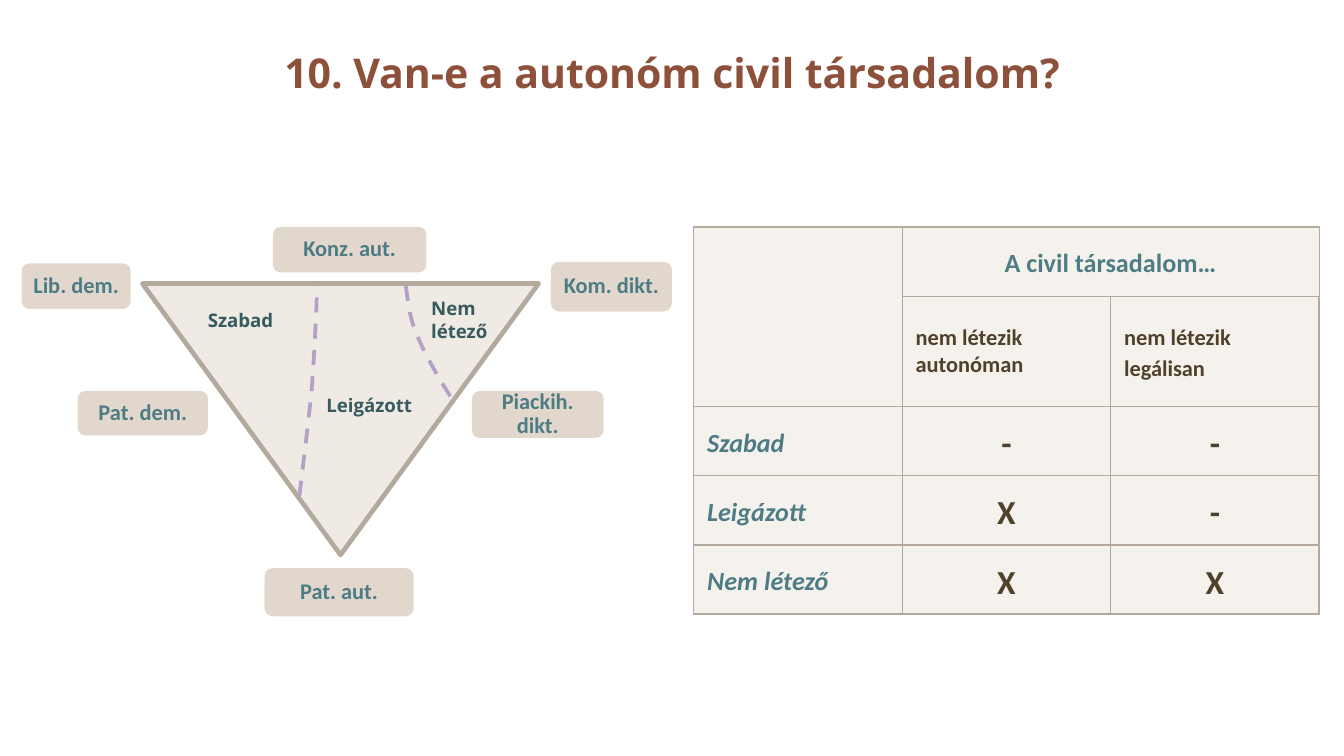
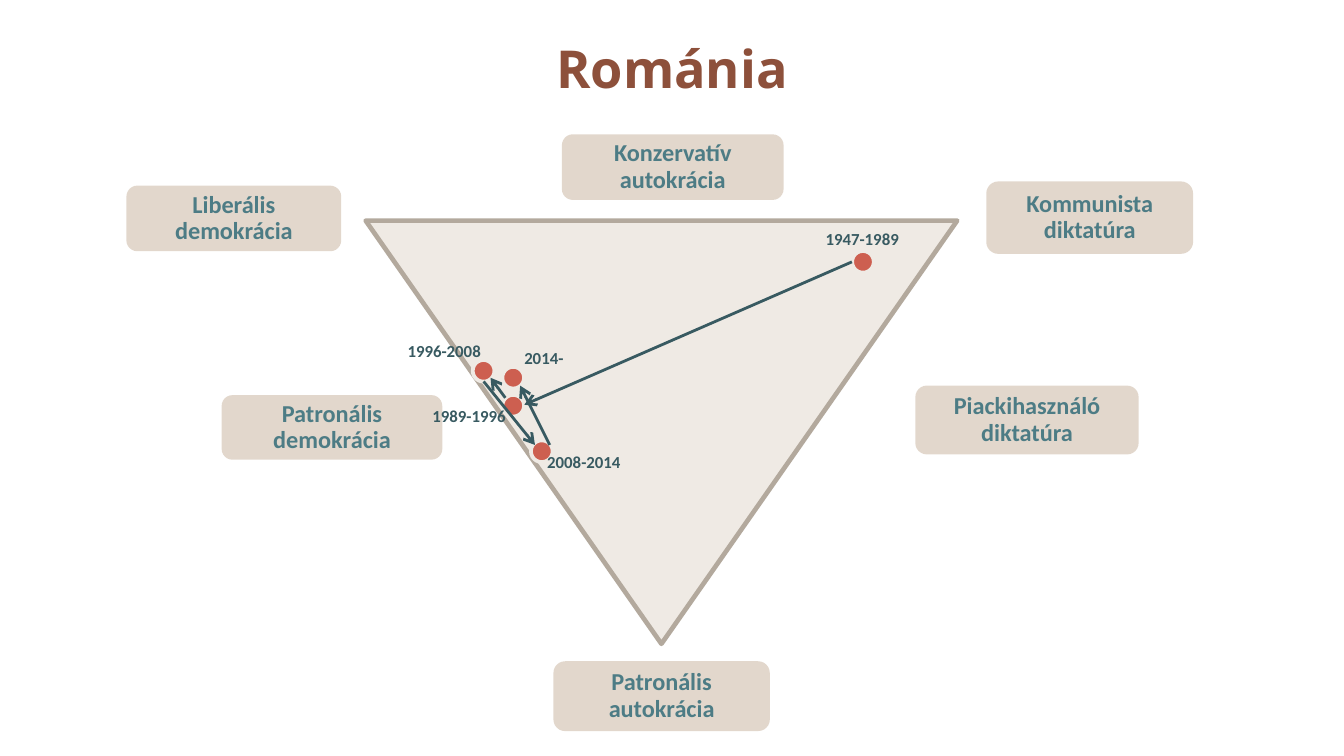
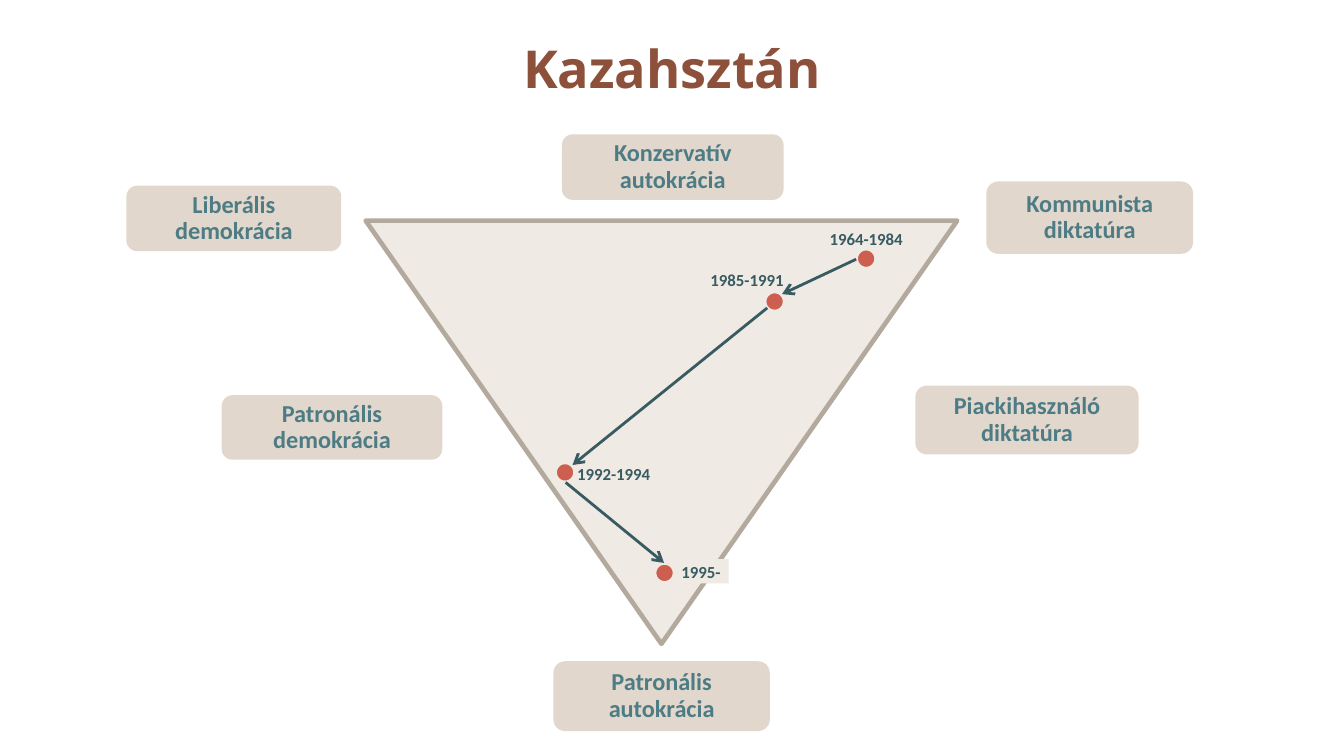
from dataclasses import dataclass

from lxml.etree import SubElement
from pptx import Presentation
from pptx.dml.color import RGBColor
from pptx.enum.dml import MSO_LINE_DASH_STYLE as Dash
from pptx.enum.shapes import MSO_CONNECTOR as Connector, MSO_SHAPE as Preset
from pptx.enum.text import MSO_ANCHOR as Anchor, MSO_AUTO_SIZE as AutoSize, PP_ALIGN as Align
from pptx.oxml import parse_xml
from pptx.oxml.ns import nsdecls, qn
from pptx.util import Cm, Pt


@dataclass(frozen=True)
class Theme:
    heading_font: str = "Open Sans"
    body_font: str = "Calibri"
    title: str = "8D503B"
    label: str = "4D7C85"
    label_fill: str = "C7B09A"
    area: str = "EFEAE4"
    edge: str = "B3A99D"
    divider: str = "B3A2C7"
    ink: str = "385A61"
    table_ink: str = "50412B"
    dot: str = "CD5F50"
    topic_size: int = 22
    country_size: int = 28
    region_size: int = 10
    period_size: int = 9
    head_size: int = 14
    subhead_size: int = 12
    mark_size: int = 18


THEME = Theme()

# Content: boxes are (left, top, width, height) in centimetres
TOPIC = {
    "title": "10. Van-e a autonóm civil társadalom?",
    "triangle": (2.69, 5.36, 7.49, 5.13),
    "label_size": 12,
    "labels": [
        ("Kom. dikt.", (10.41, 4.95, 2.29, 0.94)),
        ("Lib. dem.", (0.41, 4.98, 2.06, 0.86)),
        ("Pat. aut.", (5, 10.74, 2.82, 0.91)),
        ("Konz. aut.", (5.16, 4.29, 2.9, 0.86)),
        ("Piackih. dikt.", (8.92, 7.39, 2.49, 0.89)),
        ("Pat. dem.", (1.47, 7.39, 2.46, 0.84)),
    ],
    "regions": [
        ("Nem létező", (7.9, 5.49, 2.18, 1.12)),
        ("Szabad", (3.68, 5.72, 1.83, 0.69)),
        ("Leigázott", (5.92, 7.32, 2.74, 0.69)),
    ],
    # Each divider: a start point, then three Bézier points per stretch
    "dividers": [
        [(8.51, 7.49), (8.26, 7.09), (8, 6.65), (7.87, 6.3),
         (7.72, 5.97), (7.7, 5.56), (7.67, 5.41)],
        [(5.66, 9.37), (5.74, 8.71), (5.82, 8.05), (5.89, 7.39),
         (5.94, 6.73), (5.99, 5.77), (5.99, 5.41)],
    ],
}
CRITERIA = {
    "corner": (13.11, 4.29),
    "column": 3.94,
    "rows": [1.31, 2.08, 1.31, 1.31, 1.31],
    "head": "A civil társadalom…",
    "subheads": ["nem létezik autonóman", "nem létezik legálisan"],
    "marks": [("Szabad", "-", "-"), ("Leigázott", "X", "-"), ("Nem létező", "X", "X")],
}
REGIMES = {
    "triangle": (6.91, 4.17, 11.18, 8),
    "label_size": 13,
    "labels": [
        ("Kommunista diktatúra", (18.64, 3.43, 3.91, 1.37)),
        ("Liberális demokrácia", (2.39, 3.51, 4.06, 1.24)),
        ("Patronális autokrácia", (10.46, 12.5, 4.09, 1.32)),
        ("Konzervatív autokrácia", (10.62, 2.54, 4.19, 1.24)),
        ("Piackihasználó diktatúra", (17.3, 7.29, 4.22, 1.3)),
        ("Patronális demokrácia", (4.19, 7.47, 4.17, 1.22)),
    ],
}
# Periods: text, box, alignment, filled, centre of the dot
COUNTRIES = [
    {
        "title": "Románia", "dot": 0.41, "inset": 0.25,
        "periods": [
            ("1947-1989", (15.29, 4.19, 2.01, 0.64), Align.CENTER, False, (16.31, 4.95)),
            ("1989-1996", (7.9, 7.54, 1.93, 0.64), Align.CENTER, False, (9.7, 7.67)),
            ("1996-2008", (7.39, 6.32, 2.01, 0.64), Align.CENTER, False, (9.14, 7.01)),
            ("2008-2014", (10.03, 8.41, 2.01, 0.64), Align.CENTER, False, (10.24, 8.53)),
            ("2014-", (9.63, 6.45, 1.27, 0.64), Align.RIGHT, True, (9.7, 7.14)),
        ],
        "moves": [
            ((16.1, 4.95), (9.91, 7.65)), ((9.55, 7.52), (9.27, 7.14)),
            ((9.14, 7.21), (10.11, 8.41)), ((10.39, 8.41), (9.83, 7.29)),
        ],
    },
    {
        "title": "Kazahsztán", "dot": 0.38, "inset": 0,
        "periods": [
            ("1964-1984", (15.57, 4.32, 1.6, 0.38), Align.CENTER, False, (16.37, 4.89)),
            ("1985-1991", (13.31, 5.03, 1.5, 0.51), Align.RIGHT, False, (14.64, 5.7)),
            ("1992-1994", (10.82, 8.74, 1.47, 0.43), Align.RIGHT, False, (10.68, 8.93)),
            ("1995-", (12.88, 10.57, 0.89, 0.46), Align.LEFT, True, (12.56, 10.83)),
        ],
        "moves": [
            ((16.18, 4.9), (14.78, 5.56)), ((14.5, 5.82), (10.82, 8.79)),
            ((10.69, 9.12), (12.55, 10.64)),
        ],
    },
]


# Shared helpers
def rgb(colour):
    return RGBColor.from_string(colour)


def cm(values):
    return [Cm(value) for value in values]


def write(frame, text, size, colour, font=THEME.body_font, align=Align.LEFT,
          spacing=None, italic=False):
    frame.text = text
    paragraph = frame.paragraphs[0]
    paragraph.alignment = align
    if spacing:
        paragraph.line_spacing = spacing
    paragraph.font.name = font
    paragraph.font.size = Pt(size)
    paragraph.font.bold = True
    paragraph.font.italic = italic
    paragraph.font.color.rgb = rgb(colour)


def set_insets(frame, across, down):
    frame.margin_left = frame.margin_right = Cm(across)
    frame.margin_top = frame.margin_bottom = Cm(down)
    frame.vertical_anchor = Anchor.MIDDLE
    frame.word_wrap = True


def set_opacity(properties, percent):
    colour = properties.find(qn("a:solidFill"))[0]
    SubElement(colour, qn("a:alpha")).set("val", str(percent * 1000))


def add_preset(slide, preset, box, fill, edge=None, width=0):
    shape = slide.shapes.add_shape(preset, *cm(box))
    shape.shadow.inherit = False
    shape.fill.solid()
    shape.fill.fore_color.rgb = rgb(fill)
    if edge:
        shape.line.color.rgb = rgb(edge)
        shape.line.width = Pt(width)
    else:
        shape.line.fill.background()
    return shape


def add_titled_slide(deck, title, size, height):
    slide = deck.slides.add_slide(deck.slide_layouts[5])
    heading = slide.shapes.title
    heading.left, heading.top, heading.width, heading.height = cm((0.3, 0, 24.8, height))
    frame = heading.text_frame
    frame.auto_size = AutoSize.NONE
    frame.vertical_anchor = Anchor.MIDDLE
    write(frame, title, size, THEME.title, THEME.heading_font, Align.CENTER)
    return slide


def add_regime_triangle(slide, regimes):
    triangle = add_preset(slide, Preset.ISOSCELES_TRIANGLE, regimes["triangle"],
                          THEME.area, THEME.edge, 2.5)
    triangle.rotation = 180
    for text, box in regimes["labels"]:
        label = add_preset(slide, Preset.ROUNDED_RECTANGLE, box, THEME.label_fill)
        set_opacity(label._element.spPr, 50)
        set_insets(label.text_frame, 0.18, 0.15)
        write(label.text_frame, text, regimes["label_size"], THEME.label,
              align=Align.CENTER, spacing=0.9)


# Regions of the triangle and their dashed dividers
def bezier(points, steps=12):
    curve = [points[0]]
    for first in range(0, len(points) - 1, 3):
        stretch = points[first:first + 4]
        for step in range(1, steps + 1):
            t = step / steps
            weights = ((1 - t) ** 3, 3 * t * (1 - t) ** 2, 3 * t * t * (1 - t), t ** 3)
            curve.append(tuple(sum(w * point[axis] for w, point in zip(weights, stretch))
                               for axis in (0, 1)))
    return curve


def add_regions(slide, topic):
    for points in topic["dividers"]:
        start, *rest = [cm(point) for point in bezier(points)]
        builder = slide.shapes.build_freeform(*start)
        builder.add_line_segments(rest, close=False)
        divider = builder.convert_to_shape()
        divider.shadow.inherit = False
        divider.fill.background()
        divider.line.color.rgb = rgb(THEME.divider)
        divider.line.width = Pt(2)
        divider.line.dash_style = Dash.DASH
    for text, box in topic["regions"]:
        region = slide.shapes.add_textbox(*cm(box))
        region.text_frame.word_wrap = True
        write(region.text_frame, text, THEME.region_size, THEME.ink, THEME.heading_font)


# Criteria table
def style_cell(cell, outer):
    cell.vertical_anchor = Anchor.MIDDLE
    cell.fill.solid()
    cell.fill.fore_color.rgb = rgb(THEME.area)
    properties = cell._tc.tcPr
    set_opacity(properties, 60)
    for order, side in enumerate("LRTB"):
        width = Pt(1 if side in outer else 0.75)
        properties.insert(order, parse_xml(
            f'<a:ln{side} {nsdecls("a")} w="{width}"><a:solidFill>'
            f'<a:srgbClr val="{THEME.edge}"/></a:solidFill></a:ln{side}>'))


def add_criteria(slide, criteria):
    heights, column = criteria["rows"], criteria["column"]
    box = (*criteria["corner"], 3 * column, sum(heights))
    table = slide.shapes.add_table(len(heights), 3, *cm(box)).table
    table.first_row = table.horz_banding = False
    for part in table.columns:
        part.width = Cm(column)
    for part, height in zip(table.rows, heights):
        part.height = Cm(height)
    last = len(heights) - 1
    for row in range(len(heights)):
        for col in range(3):
            touches = {"L": col == 0, "R": col == 2, "T": row == 0, "B": row == last}
            style_cell(table.cell(row, col), [side for side in touches if touches[side]])
    table.cell(0, 0).merge(table.cell(1, 0))
    table.cell(0, 1).merge(table.cell(0, 2))

    write(table.cell(0, 1).text_frame, criteria["head"], THEME.head_size, THEME.label,
          align=Align.CENTER, spacing=1.15)
    for col, (text, spacing) in enumerate(zip(criteria["subheads"], (None, 1.15)), 1):
        write(table.cell(1, col).text_frame, text, THEME.subhead_size, THEME.table_ink,
              spacing=spacing)
    for row, (state, *marks) in enumerate(criteria["marks"], 2):
        write(table.cell(row, 0).text_frame, state, THEME.head_size, THEME.label,
              align=Align.JUSTIFY, spacing=1.15, italic=True)
        for col, mark in enumerate(marks, 1):
            write(table.cell(row, col).text_frame, mark, THEME.mark_size, THEME.table_ink,
                  align=Align.CENTER, spacing=1.15)


# Path of a country through the triangle
def add_periods(slide, country, wanted_fill):
    for text, box, align, filled, _ in country["periods"]:
        if filled != wanted_fill:
            continue
        if filled:
            period = add_preset(slide, Preset.RECTANGLE, box, THEME.area)
        else:
            period = slide.shapes.add_textbox(*cm(box))
        set_insets(period.text_frame, country["inset"], 0)
        write(period.text_frame, text, THEME.period_size, THEME.ink, align=align)


def add_move(slide, start, end):
    move = slide.shapes.add_connector(Connector.STRAIGHT, *cm(start + end))
    move.line.color.rgb = rgb(THEME.ink)
    move.line.width = Pt(1.5)
    SubElement(move.line._get_or_add_ln(), qn("a:tailEnd")).set("type", "arrow")
    SubElement(move._element.spPr, qn("a:effectLst"))


def add_country_path(slide, country):
    add_periods(slide, country, True)
    size = country["dot"]
    for *_, (x, y) in country["periods"]:
        add_preset(slide, Preset.OVAL, (x - size / 2, y - size / 2, size, size),
                   THEME.dot, THEME.area, 2)
    for start, end in country["moves"]:
        add_move(slide, start, end)
    add_periods(slide, country, False)


def main():
    deck = Presentation()
    deck.slide_width, deck.slide_height = cm((25.4, 14.29))

    slide = add_titled_slide(deck, TOPIC["title"], THEME.topic_size, 2.74)
    add_criteria(slide, CRITERIA)
    add_regime_triangle(slide, TOPIC)
    add_regions(slide, TOPIC)

    for country in COUNTRIES:
        slide = add_titled_slide(deck, country["title"], THEME.country_size, 2.54)
        add_regime_triangle(slide, REGIMES)
        add_country_path(slide, country)

    deck.save("out.pptx")


if __name__ == "__main__":
    main()
